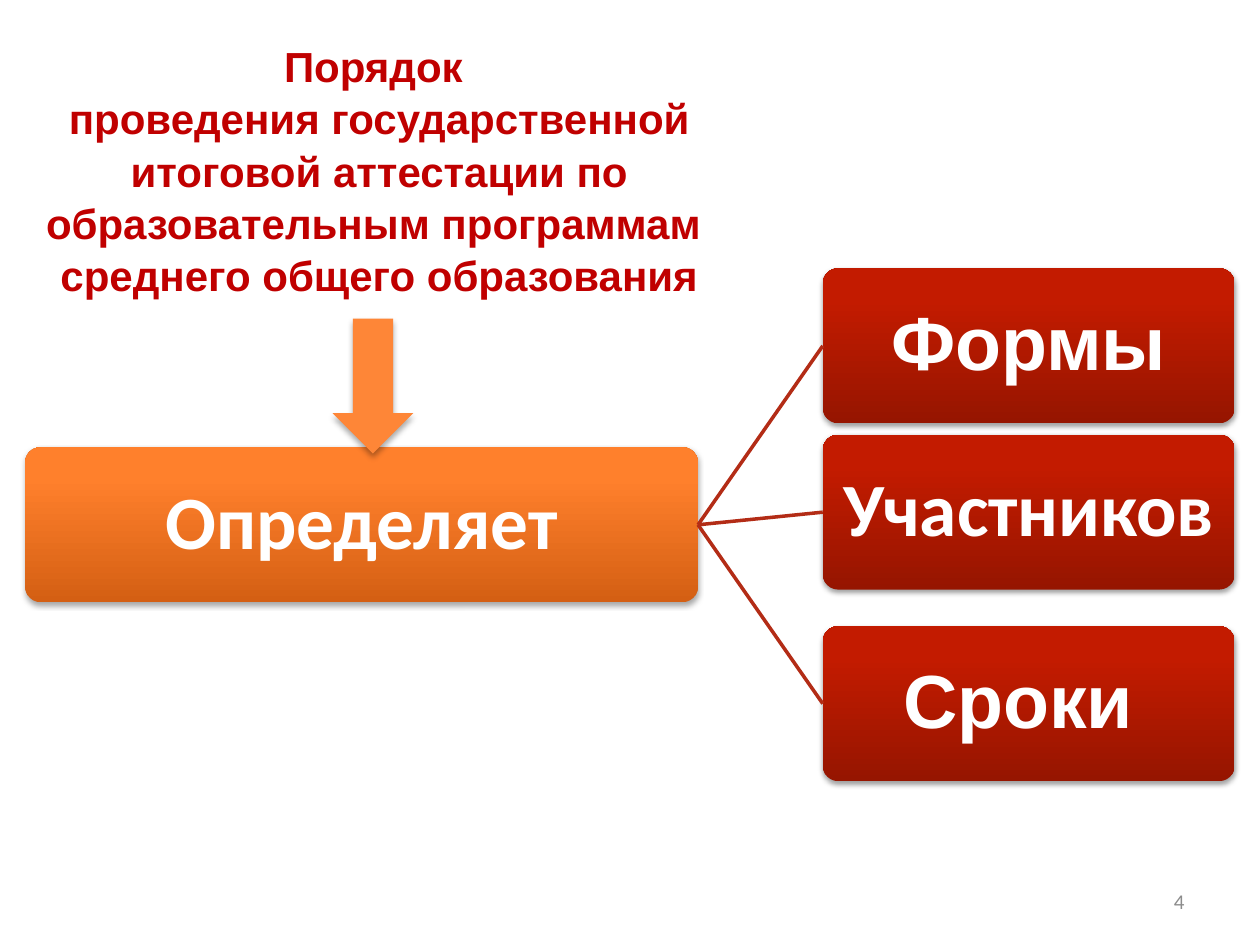
from lxml import etree
from pptx import Presentation
from pptx import util as u
from pptx.dml.color import RGBColor
from pptx.enum import shapes, text
from pptx.oxml import ns

ORANGE = ("D45F13", "FF802C")
RED = ("961500", "C31B00")


def color(value):
    return RGBColor.from_string(value)


def add_effects(shape):
    """Append an empty effect list, which switches off the theme shadow."""
    return etree.SubElement(shape._element.spPr, ns.qn("a:effectLst"))


def add_shadow(shape, opacity, blur, distance):
    """Add a black shadow that falls straight down."""
    shadow = etree.SubElement(
        add_effects(shape), ns.qn("a:outerShdw"), blurRad=str(u.Pt(blur)),
        dist=str(u.Pt(distance)), dir="5400000", rotWithShape="0")
    black = etree.SubElement(shadow, ns.qn("a:srgbClr"), val="000000")
    etree.SubElement(black, ns.qn("a:alpha"), val=str(opacity * 1000))


class SlideBuilder:
    line_color = "B32C16"
    block_height = 1.23

    def __init__(self, page):
        self.page = page

    def set_text(self, shape, lines, size, font, ink, bold=True,
                 align=text.PP_ALIGN.CENTER, inset=None, spacing=None):
        frame = shape.text_frame
        frame.word_wrap = True
        frame.vertical_anchor = text.MSO_ANCHOR.MIDDLE
        if inset is not None:
            frame.margin_left = frame.margin_right = u.Inches(inset)
            frame.margin_top = frame.margin_bottom = u.Inches(inset)
        para = frame.paragraphs[0]
        para.alignment = align
        para.line_spacing = spacing
        for number, line in enumerate(lines):
            if number:
                para.add_line_break()
            span = para.add_run()
            span.text = line
            span.font.size = u.Pt(size)
            span.font.name = font
            span.font.bold = bold
            span.font.color.rgb = color(ink)

    def text_box(self, place, lines, *style, **options):
        box = self.page.shapes.add_textbox(*map(u.Inches, place))
        self.set_text(box, lines, *style, **options)

    def block(self, left, top, width, label, font, gradient, opacity, distance):
        box = self.page.shapes.add_shape(
            shapes.MSO_SHAPE.ROUNDED_RECTANGLE, u.Inches(left), u.Inches(top),
            u.Inches(width), u.Inches(self.block_height))
        box.adjustments[0] = 0.1
        box.fill.gradient()
        box.fill.gradient_angle = 90
        for stop, position, shade in zip(box.fill.gradient_stops, (0, 0.8), gradient):
            stop.position = position
            stop.color.rgb = color(shade)
        box.line.fill.background()
        add_shadow(box, opacity, 3.1, distance)
        self.set_text(box, [label], 43, font, "FFFFFF", inset=0.07, spacing=0.9)
        return box

    def link(self, source, target):
        """Join the right side of source to the left side of target."""
        line = self.page.shapes.add_connector(
            shapes.MSO_CONNECTOR.STRAIGHT, 0, 0, 0, 0)
        line.begin_connect(source, 3)
        line.end_connect(target, 1)
        line.line.color.rgb = color(self.line_color)
        line.line.width = u.Pt(2)
        add_effects(line)

    def down_arrow(self, place, fill):
        arrow = self.page.shapes.add_shape(
            shapes.MSO_SHAPE.DOWN_ARROW, *map(u.Inches, place))
        arrow.fill.solid()
        arrow.fill.fore_color.rgb = color(fill)
        arrow.line.fill.background()
        add_shadow(arrow, 32, 3.5, 2.2)


def main():
    deck = Presentation()
    deck.slide_width, deck.slide_height = u.Inches(10), u.Inches(7.5)
    builder = SlideBuilder(deck.slides.add_slide(deck.slide_layouts[6]))

    title = [
        "Порядок ",
        "проведения государственной итоговой аттестации по "
        "образовательным программам ",
        "среднего общего образования",
    ]
    builder.text_box((0, 0.28, 6.02, 2.13), title, 24, "Arial", "C00000",
                     spacing=1.04)

    root = builder.block(0.2, 3.55, 5.34, "Определяет", "Calibri", ORANGE, 35, 1.8)
    branches = [
        (2.13, "Формы", "Arial"),
        (3.45, "Участников", "Calibri"),
        (4.97, "Сроки ", "Arial"),
    ]
    for top, label, font in branches:
        branch = builder.block(6.53, top, 3.27, label, font, RED, 38, 1.6)
        builder.link(root, branch)

    builder.text_box((7.17, 6.95, 2.33, 0.4), ["4"], 12, "Calibri", "8C8C8C",
                     bold=False, align=text.PP_ALIGN.RIGHT)
    builder.down_arrow((2.64, 2.53, 0.64, 1.07), "FE8637")
    deck.save("out.pptx")


if __name__ == "__main__":
    main()
